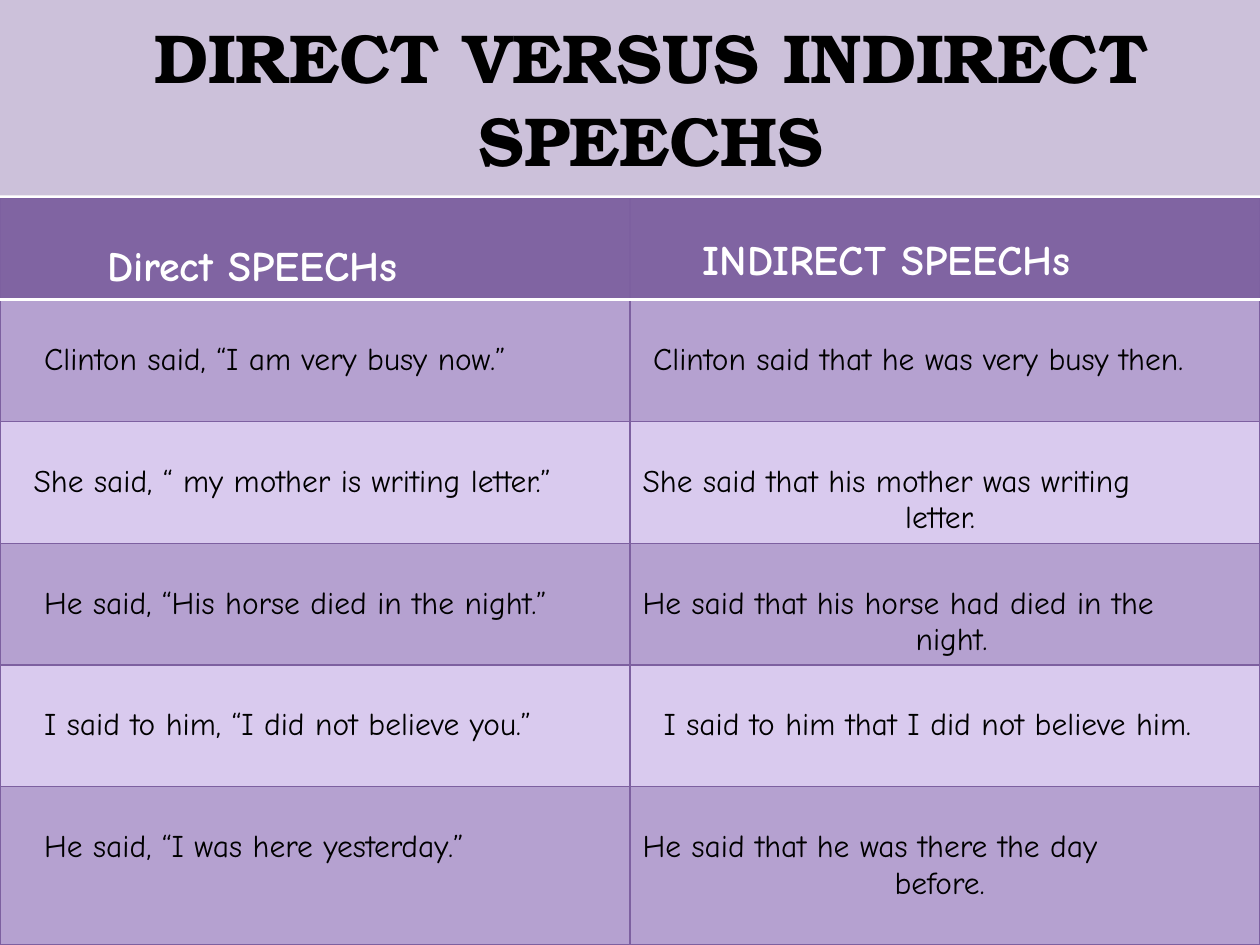
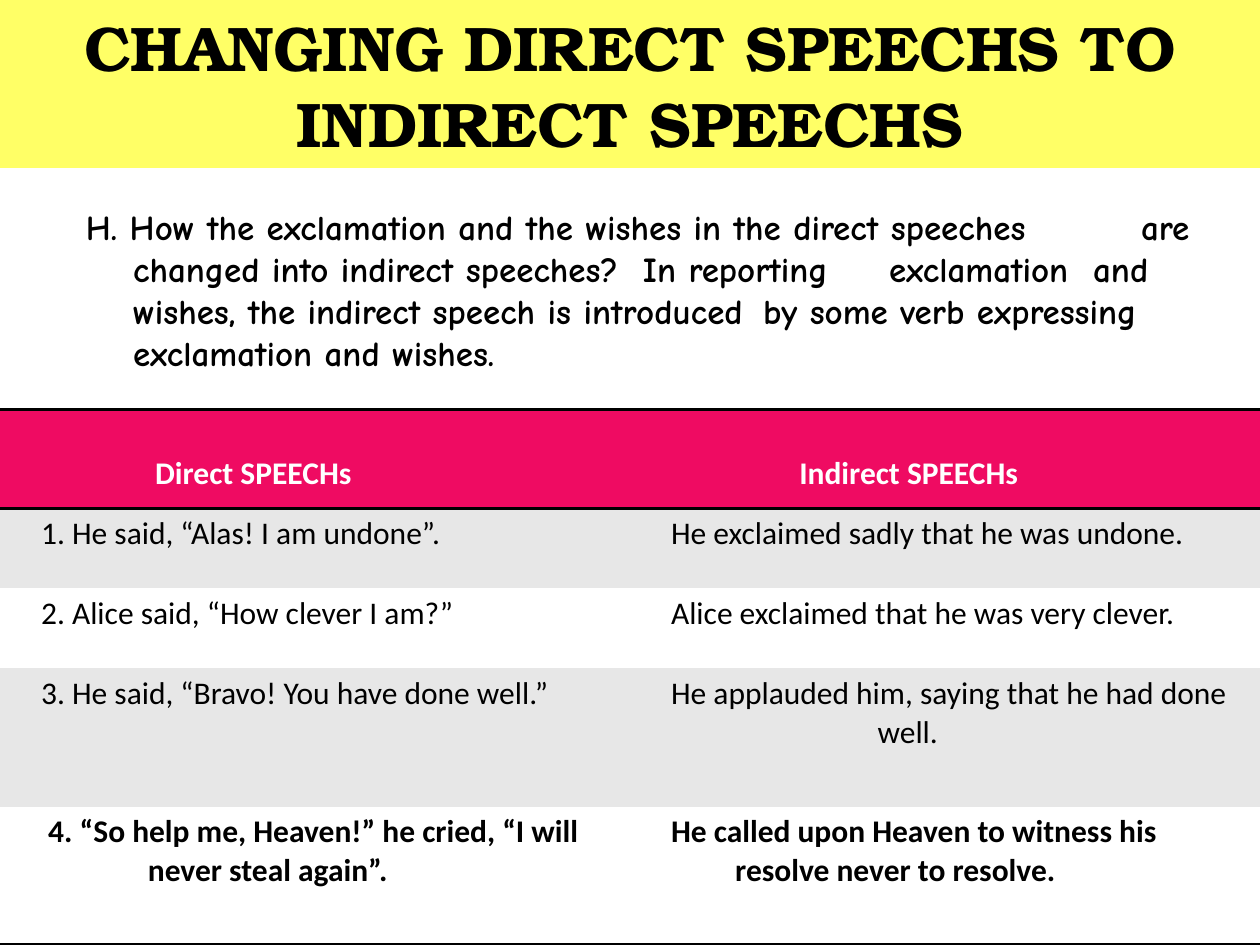
from dataclasses import dataclass

from lxml.etree import SubElement
from pptx import Presentation
from pptx.dml.color import RGBColor
from pptx.enum.shapes import MSO_SHAPE as Shape
from pptx.enum.text import MSO_ANCHOR as Anchor, PP_ALIGN as Align
from pptx.oxml.ns import qn
from pptx.util import Pt

COLORS = {
    "ink": "000000",
    "white": "FFFFFF",
    "lilac": "CCC1DA",
    "purple": "8064A2",
    "purple_line": "7D60A0",
    "purple_band": "B5A1D0",
    "purple_pale": "D9CAEE",
    "yellow": "FFFF66",
    "pink": "EF0B62",
    "grey": "E7E7E7",
}
TITLE_FONT = "TeX Gyre Bonum"
HAND_FONT = "Comic Neue"
PLAIN_FONT = "Calibri"
WIDTH, HEIGHT = 720, 540


@dataclass
class RowStyle:
    font: str
    size: float
    color: str
    fill: str
    indent_step: float
    bold: bool = False
    tops: tuple = (3.6, 3.6)


def rgb(name):
    return RGBColor.from_string(COLORS[name])


class Lesson:
    def __init__(self):
        self.deck = Presentation()
        self.deck.slide_width, self.deck.slide_height = Pt(WIDTH), Pt(HEIGHT)
        self.page = None

    def new_page(self):
        self.page = self.deck.slides.add_slide(self.deck.slide_layouts[6])

    def style(self, para, font, size, color, bold):
        para.font.name, para.font.size, para.font.bold = font, Pt(size), bold
        para.font.color.rgb = rgb(color)

    def title(self, text, height, size, fill, left_inset=7.2):
        band = self.page.shapes.add_shape(Shape.RECTANGLE, 0, 0, Pt(WIDTH), Pt(height))
        band.shadow.inherit = False
        band.fill.solid()
        band.fill.fore_color.rgb = rgb(fill)
        band.line.fill.background()
        frame = band.text_frame
        frame.word_wrap = True
        frame.vertical_anchor = Anchor.MIDDLE
        frame.margin_left = Pt(left_inset)
        para = frame.paragraphs[0]
        para.text, para.alignment = text, Align.CENTER
        self.style(para, TITLE_FONT, size, "ink", True)

    def body(self, text, left, top, width, height):
        box = self.page.shapes.add_textbox(Pt(left), Pt(top), Pt(width), Pt(height))
        box.text_frame.word_wrap = True
        para = box.text_frame.paragraphs[0]
        para.text = text
        para.space_before, para.line_spacing = Pt(4), Pt(24)
        self.style(para, HAND_FONT, 20, "ink", True)
        props = para._p.get_or_add_pPr()
        props.set("marL", str(Pt(27)))
        props.set("indent", str(Pt(-27)))
        props.set("defTabSz", str(Pt(72)))

    def border(self, cell, side, color, width):
        props = cell._tc.get_or_add_tcPr()
        line = SubElement(props, qn("a:ln" + side), w=str(Pt(width)))
        if color:
            solid = SubElement(line, qn("a:solidFill"))
            SubElement(solid, qn("a:srgbClr"), val=COLORS[color])
        else:
            SubElement(line, qn("a:noFill"))

    def cell(self, cell, lines, style, top, borders):
        for side in "LRTB":
            self.border(cell, side, *borders[side])
        cell.fill.solid()
        cell.fill.fore_color.rgb = rgb(style.fill)
        cell.margin_top, cell.margin_bottom = Pt(top), 0
        frame = cell.text_frame
        for index, (steps, text) in enumerate(lines):
            para = frame.add_paragraph() if index else frame.paragraphs[0]
            para.text = text
            self.style(para, style.font, style.size, style.color, style.bold)
            para._p.get_or_add_pPr().set("marL", str(Pt(steps * style.indent_step)))

    def table(self, top, heights, rows, styles, borders_for):
        frame = self.page.shapes.add_table(
            len(rows), 2, 0, Pt(top), Pt(WIDTH), Pt(sum(heights)))
        table = frame.table
        table.first_row = table.horz_banding = False
        for column in table.columns:
            column.width = Pt(WIDTH / 2)
        for r, (height, row, style) in enumerate(zip(heights, rows, styles)):
            table.rows[r].height = Pt(height)
            for c, lines in enumerate(row):
                self.cell(table.cell(r, c), lines, style, style.tops[c],
                          borders_for(r, len(rows)))


def purple_borders(row, count):
    borders = dict.fromkeys("LRTB", ("purple_line", 0.75))
    if row == 0:
        borders["B"] = ("white", 2)
    if row == 1:
        borders["T"] = ("white", 2)
    return borders


def ruled_borders(row, count):
    borders = dict.fromkeys("LRTB", (None, 0))
    if row in (0, 1):
        borders["T"] = ("ink", 2)
    if row in (0, count - 1):
        borders["B"] = ("ink", 2)
    return borders


def versus_page(lesson):
    lesson.new_page()
    lesson.title("DIRECT VERSUS INDIRECT SPEECHS", 111.6, 39.6, "lilac", 31)
    rows = [
        ([(9, "Direct SPEECHs")], [(5.75, "INDIRECT SPEECHs")]),
        ([(3, "Clinton said, “I am very busy now.”")],
         [(1, "Clinton said that he was very busy then.")]),
        ([(2, "She said, “ my mother is writing letter.”")],
         [(0, "She said that his mother was writing"), (25, "letter.")]),
        ([(3, "He said, “His horse died in the night.”")],
         [(0, "He said that his horse had died in the"), (26, "night.")]),
        ([(3, "I said to him, “I did not believe you.”")],
         [(2, "I said to him that I did not believe him.")]),
        ([(3, "He said, “I was here yesterday.”")],
         [(0, "He said that he was there the day"), (24, "before.")]),
    ]
    header = RowStyle(HAND_FONT, 24, "white", "purple", 6, True, (25.6, 22))
    band, pale = [RowStyle(HAND_FONT, 18, "ink", fill, 6, tops=(24.3, 24.3))
                  for fill in ("purple_band", "purple_pale")]
    lesson.table(113.6, [57.6] + [69.6] * 4 + [90], rows,
                 [header, band, pale, band, pale, band], purple_borders)


def changing_page(lesson):
    lesson.new_page()
    lesson.title("CHANGING DIRECT SPEECHS TO INDIRECT SPEECHS", 96, 36, "yellow")
    lesson.body(
        "H. How the exclamation and the wishes in the direct speeches\tare changed "
        "into indirect speeches?  In reporting\texclamation  and wishes, the indirect "
        "speech is introduced\tby some verb expressing exclamation and wishes.",
        42, 114, 666, 118)
    rows = [
        ([(20, "Direct SPEECHs")], [(22, "Indirect SPEECHs")]),
        ([(4, "1. He said, “Alas! I am undone”.")],
         [(4, "He exclaimed sadly that he was undone.")]),
        ([(4, "2. Alice said, “How clever I am?”")],
         [(4, "Alice exclaimed that he was very clever.")]),
        ([(4, "3. He said, “Bravo! You have done well.”")],
         [(4, "He applauded him, saying that he had done"), (33, "well.")]),
        ([(5, "4. “So help me, Heaven!” he cried, “I will"),
          (19, "never steal again”.")],
         [(4, "He called upon Heaven to witness his"),
          (13, "resolve never to resolve.")]),
    ]
    header = RowStyle(PLAIN_FONT, 18, "white", "pink", 4.07, True, (25.6, 25.6))
    grey, white = [RowStyle(PLAIN_FONT, 18, "ink", fill, 4.07)
                   for fill in ("grey", "white")]
    closing = RowStyle(PLAIN_FONT, 18, "ink", "white", 4.07, True)
    lesson.table(234, [56.4, 45.8, 45.8, 79, 79], rows,
                 [header, grey, white, grey, closing], ruled_borders)


def main():
    lesson = Lesson()
    versus_page(lesson)
    changing_page(lesson)
    lesson.deck.save("out.pptx")


if __name__ == "__main__":
    main()
